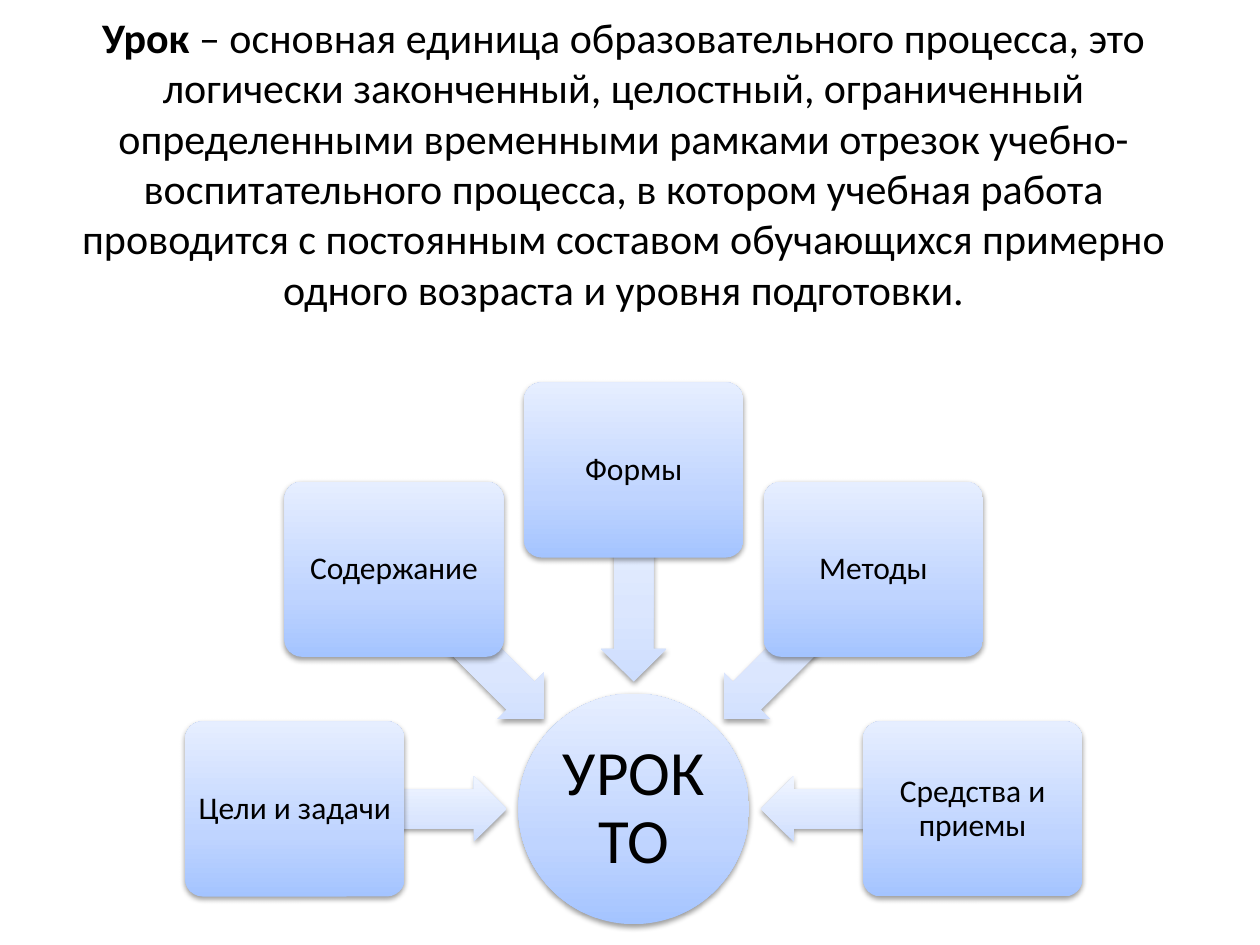
from math import cos, radians, sin
from lxml import etree
from pptx import Presentation, util as u
from pptx.dml.color import RGBColor
from pptx.enum import shapes, text

TERM = "Урок "
MEANING = ("– основная единица образовательного процесса, это логически законченный, "
           "целостный, ограниченный определенными временными рамками отрезок "
           "учебно-воспитательного процесса, в котором учебная работа проводится с "
           "постоянным составом обучающихся примерно одного возраста и уровня подготовки.")
HUB = "УРОК ТО"
PARTS = ["Цели и задачи", "Содержание", "Формы", "Методы", "Средства и приемы"]

HEX = {"text": "000000", "shadow": "000000"}
GRADS = {
    "box": {0: "A4C4FF", 35: "BFD4FF", 100: "E6EEFF"},
    "arrow": {0: "CDDDFE", 35: "DBE6FE", 100: "F0F5FF"},
}
MID = (5.03, 6.42)
BOX_R, ARROW_R = 2.69, 1.85
NS = 'xmlns:a="http://schemas.openxmlformats.org/drawingml/2006/main"'
KIND = shapes.MSO_SHAPE


def style(shape, grad):
    """Give a shape an upward gradient, no outline and a soft shadow."""
    stops = "".join(f'<a:gs pos="{pos * 1000}"><a:srgbClr val="{hue}"/></a:gs>'
                    for pos, hue in GRADS[grad].items())
    props = shape._element.spPr
    props.append(etree.fromstring(
        f'<a:gradFill {NS} rotWithShape="0"><a:gsLst>{stops}</a:gsLst>'
        '<a:lin ang="16200000" scaled="0"/></a:gradFill>'))
    shape.line.fill.background()
    props.append(etree.fromstring(
        f'<a:effectLst {NS}><a:outerShdw blurRad="40000" dist="20000" dir="5400000" '
        f'rotWithShape="0"><a:srgbClr val="{HEX["shadow"]}"><a:alpha val="38000"/>'
        '</a:srgbClr></a:outerShdw></a:effectLst>'))


def add(slide, kind, angle, far, size, grad, adj=()):
    """Centre a shape on the ray at angle, far inches from the hub."""
    wide, high = size
    x = MID[0] + far * cos(radians(angle)) - wide / 2
    y = MID[1] + far * sin(radians(angle)) - high / 2
    shape = slide.shapes.add_shape(kind, *map(u.Inches, (x, y, wide, high)))
    for i, val in enumerate(adj):
        shape.adjustments[i] = val
    style(shape, grad)
    return shape


def write(par, words, size, bold=False):
    run = par.add_run()
    run.text = words
    for key, val in {"name": "Calibri", "size": u.Pt(size), "bold": bold}.items():
        setattr(run.font, key, val)
    run.font.color.rgb = RGBColor.from_string(HEX["text"])


def label(shape, words, size, inset):
    frame = shape.text_frame
    frame.word_wrap = True
    frame.vertical_anchor = text.MSO_ANCHOR.MIDDLE
    for side in ("left", "top", "right", "bottom"):
        setattr(frame, f"margin_{side}", u.Inches(inset))
    par = frame.paragraphs[0]
    par.alignment = text.PP_ALIGN.CENTER
    par.line_spacing = 0.9
    write(par, words, size)


def main():
    deck = Presentation()
    deck.slide_width, deck.slide_height = u.Inches(10), u.Inches(7.5)
    slide = deck.slides.add_slide(deck.slide_layouts[6])

    frame = slide.shapes.add_textbox(*map(u.Inches, (0.2, 0.04, 9.5, 2.52))).text_frame
    frame.word_wrap = True
    frame.auto_size = text.MSO_AUTO_SIZE.SHAPE_TO_FIT_TEXT
    par = frame.paragraphs[0]
    par.alignment = text.PP_ALIGN.CENTER
    write(par, TERM, 24, True)
    write(par, MEANING, 24)

    label(add(slide, KIND.OVAL, 0, 0, (1.83, 1.83), "box"), HUB, 36, 0.03)
    for i, part in enumerate(PARTS):
        angle = 180 + 45 * i
        arrow = add(slide, KIND.LEFT_ARROW, angle, ARROW_R, (1.68, 0.52), "arrow", (0.6, 0.5))
        arrow.rotation = angle % 360
        box = add(slide, KIND.ROUNDED_RECTANGLE, angle, BOX_R, (1.74, 1.39), "box", (0.1,))
        label(box, part, 18, 0.04)

    deck.save("out.pptx")


if __name__ == "__main__":
    main()
